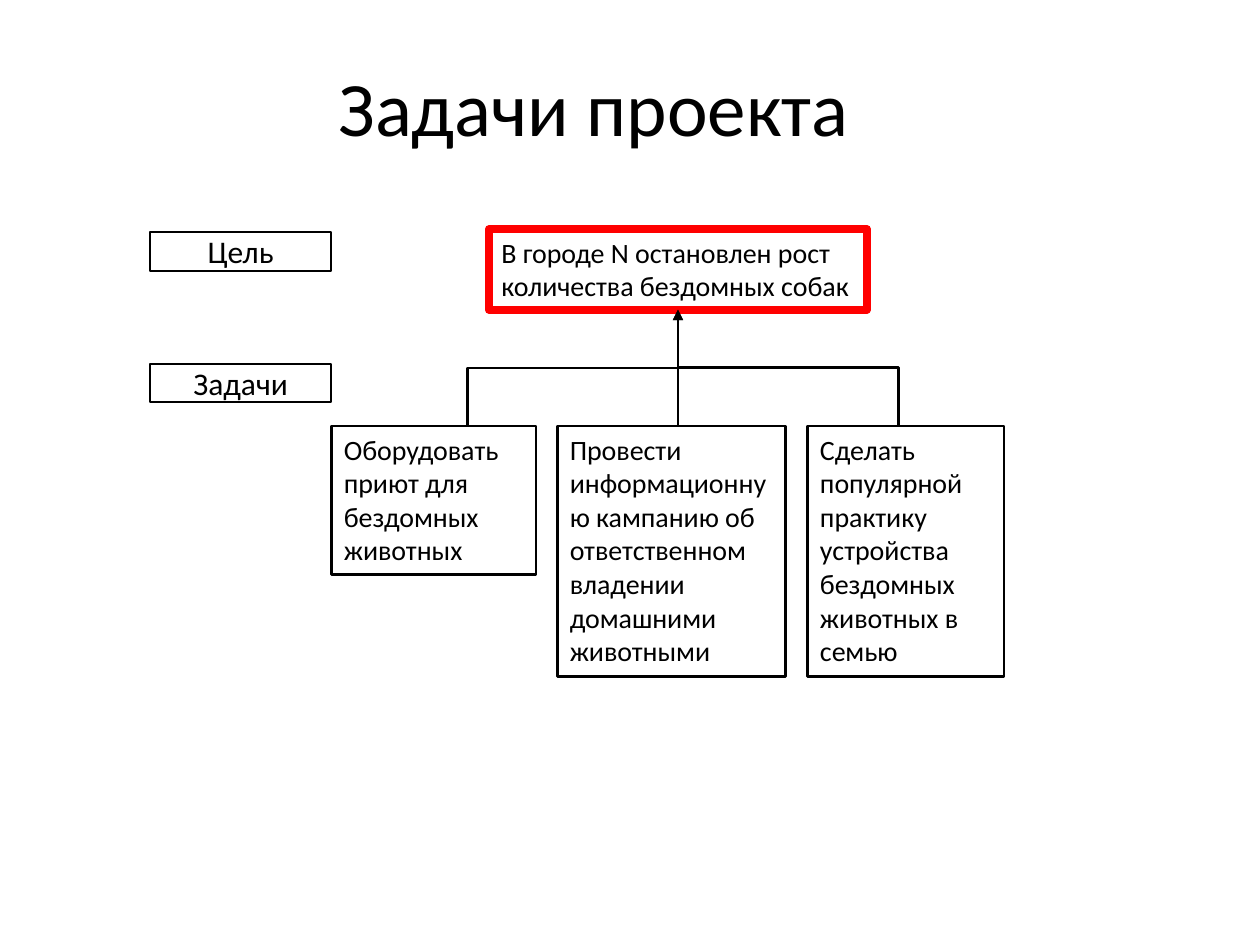
from pptx import Presentation
from pptx.dml.color import RGBColor
from pptx.enum.shapes import MSO_CONNECTOR as Connector, MSO_SHAPE as Shape
from pptx.enum.text import MSO_ANCHOR as Anchor, MSO_AUTO_SIZE as AutoSize, PP_ALIGN as Align
from pptx.oxml.ns import qn
from pptx.util import Pt
from lxml import etree

BLACK, RED = "000000", "FF0000"


def color(value):
    return RGBColor.from_string(value)


def style_connector(connector, arrow=False):
    connector.line.color.rgb = color(BLACK)
    connector.line.width = Pt(1.5)
    if arrow:
        line = connector.line._get_or_add_ln()
        etree.SubElement(line, qn("a:tailEnd"), type="triangle")
    etree.SubElement(connector._element.spPr, qn("a:effectLst"))


presentation = Presentation()
presentation.slide_width, presentation.slide_height = Pt(720), Pt(540)
slide = presentation.slides.add_slide(presentation.slide_layouts[5])

# Title
title = slide.shapes.title
title.left, title.top, title.width, title.height = Pt(116.6), Pt(9.4), Pt(445.7), Pt(102.2)
title.text_frame.text = "Задачи проекта"
title.text_frame.vertical_anchor = Anchor.MIDDLE
paragraph = title.text_frame.paragraphs[0]
paragraph.alignment = Align.CENTER
paragraph.font.name, paragraph.font.size = "Calibri", Pt(44)
paragraph.font.color.rgb = color(BLACK)

# Boxes: text, left, top, width, height, line colour, line width, is a row label
task_top = 243.4
boxes = [
    ("Цель", 85.7, 132.5, 103.7, 22.5, BLACK, 1, True),
    ("Задачи", 85.7, 207.8, 103.7, 21.8, BLACK, 1, True),
    ("В городе N остановлен рост количества бездомных собак",
     279.4, 131, 216, 46.1, RED, 4.5, False),
    ("Оборудовать приют для бездомных животных",
     189.4, task_top, 116.9, 84.8, BLACK, 1.5, False),
    ("Провести информационную кампанию об ответственном владении домашними животными",
     318.5, task_top, 130.3, 143.3, BLACK, 1.5, False),
    ("Сделать популярной практику устройства бездомных животных в семью",
     461.5, task_top, 112.3, 143.3, BLACK, 1.5, False),
]
for text, left, top, width, height, line_color, line_width, is_label in boxes:
    shape = slide.shapes.add_shape(Shape.RECTANGLE, Pt(left), Pt(top), Pt(width), Pt(height))
    shape.shadow.inherit = False
    shape.fill.background()
    shape.line.color.rgb = color(line_color)
    shape.line.width = Pt(line_width)
    frame = shape.text_frame
    frame.text = text
    frame.word_wrap = True
    frame.auto_size = AutoSize.SHAPE_TO_FIT_TEXT
    frame.vertical_anchor = Anchor.TOP
    if is_label:
        frame.margin_left = frame.margin_top = frame.margin_right = frame.margin_bottom = 0
    paragraph = frame.paragraphs[0]
    paragraph.alignment = Align.CENTER if is_label else Align.LEFT
    paragraph.font.name, paragraph.font.size = "Calibri", Pt(18 if is_label else 16)
    paragraph.font.color.rgb = color(BLACK)

# Elbow arrows from the outer tasks up to the goal, turned to leave vertically
goal_x, goal_bottom = 387.4, 177
rise = task_top - goal_bottom
middle_y = goal_bottom + rise / 2
for start_x in (267.1, 513.4):
    middle_x, half_run = (start_x + goal_x) / 2, (goal_x - start_x) / 2
    elbow = slide.shapes.add_connector(
        Connector.ELBOW,
        Pt(middle_x - rise / 2), Pt(middle_y - half_run),
        Pt(middle_x + rise / 2), Pt(middle_y + half_run))
    elbow._element.spPr.find(qn("a:xfrm")).set("rot", str(270 * 60000))
    style_connector(elbow, arrow=True)

# Stem of the middle task
stem = slide.shapes.add_connector(
    Connector.STRAIGHT, Pt(goal_x), Pt(middle_y), Pt(goal_x), Pt(task_top))
style_connector(stem)

presentation.save("out.pptx")
